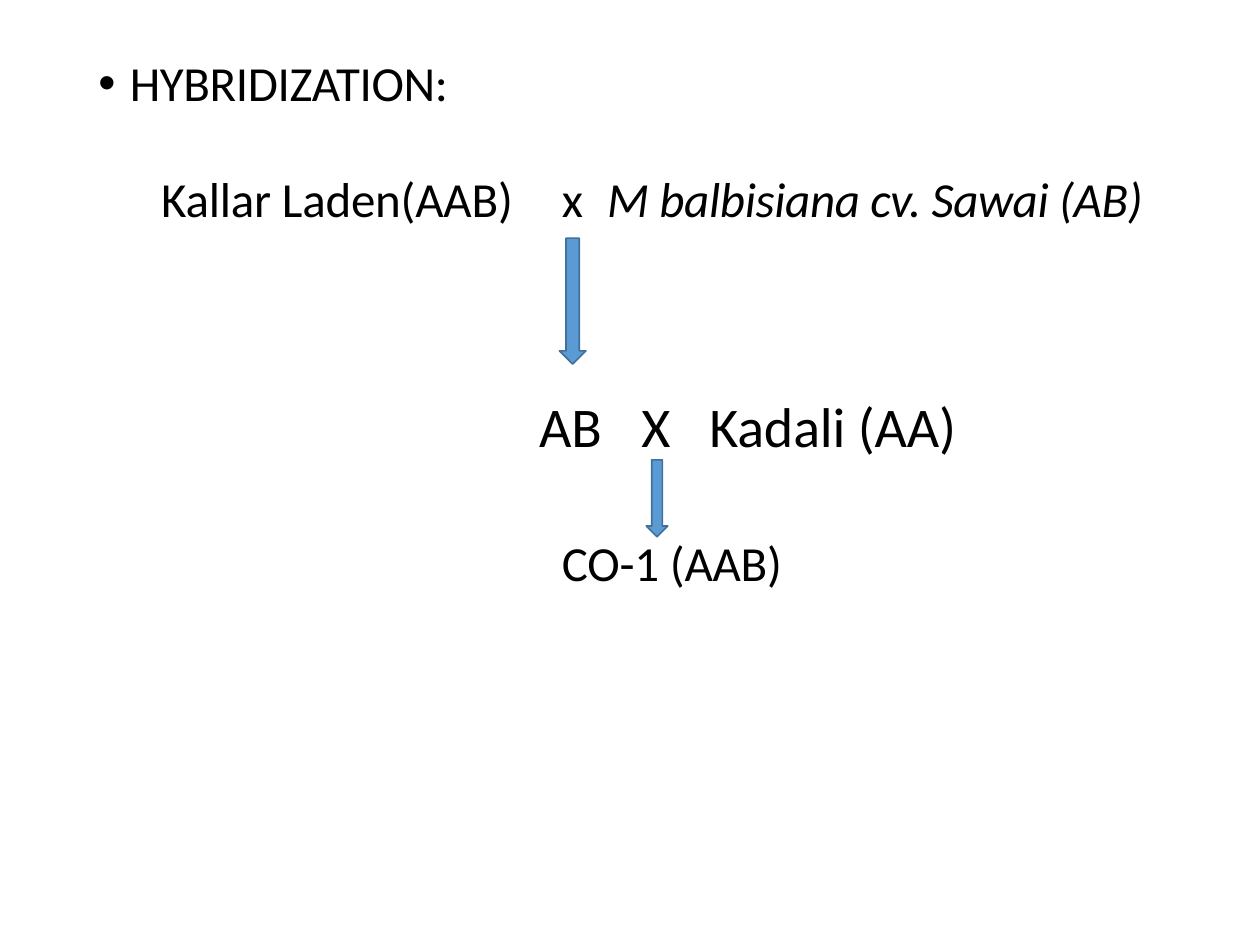
from lxml.etree import SubElement
from pptx import Presentation
from pptx.dml.color import RGBColor
from pptx.enum.shapes import MSO_SHAPE as Kind
from pptx.enum.text import MSO_ANCHOR as Anchor, MSO_AUTO_SIZE as Fit, PP_ALIGN as Align
from pptx.oxml.ns import qn
from pptx.util import Inches, Pt

HEAD = ("HYBRIDIZATION:", 28)
HEAD_BOX = (0.77, 0.41, 2.84, 0.49)
CROSSES = [
    ((1.27, 1.33, 2.84, 0.49), (), [("Kallar Laden(AAB)", 28, 0)]),
    ((4.45, 1.33, 4.8, 0.49), (0.36,),
     [("x\t*M balbisiana cv. Sawai (AB)", 28, 0)]),
    ((4.27, 3.1, 3.4, 1.6), (0.81, 1.35),
     [("AB\tX\tKadali (AA)", 32, 0), ("CO-1 (AAB)", 28, 0.18)]),
]
GAP = 42
ARROWS = [(4.44, 1.89, 0.21, 1), (5.13, 3.65, 0.17, 0.61)]


def color(code):
    return RGBColor.from_string(code)


def indent(para, left, hang=0, bullet=None, tabs=()):
    props = para._p.get_or_add_pPr()
    props.set("marL", str(Inches(left)))
    if hang:
        props.set("indent", str(Inches(hang)))
    if bullet:
        SubElement(props, qn("a:buFont"), typeface="Arial")
        SubElement(props, qn("a:buChar"), char=bullet)
    if tabs:
        stops = SubElement(props, qn("a:tabLst"))
        for stop in tabs:
            SubElement(stops, qn("a:tab"), pos=str(Inches(stop)), algn="l")


def add_run(para, text, track):
    run = para.add_run()
    run.text = text
    run._r.get_or_add_rPr().set("spc", str(track))
    return run


def write(para, text, size, track=-10):
    plain, _, latin = text.partition("*")
    add_run(para, plain, track)
    if latin:
        add_run(para, latin, -20).font.italic = True
    para.alignment = Align.LEFT
    para.font.name = "Calibri"
    para.font.size = Pt(size)
    para.font.color.rgb = color("000000")


def frame(shape):
    body = shape.text_frame
    body.auto_size = Fit.NONE
    body.word_wrap = True
    body.vertical_anchor = Anchor.TOP
    body.margin_left = body.margin_right = body.margin_bottom = 0
    body.margin_top = Inches(0.01)
    return body


deck = Presentation()
deck.slide_width, deck.slide_height = Inches(10), Inches(7.5)
slide = deck.slides.add_slide(deck.slide_layouts[5])

title = slide.shapes.title
title.left, title.top, title.width, title.height = map(Inches, HEAD_BOX)
para = frame(title).paragraphs[0]
indent(para, 0.26, -0.25, "•")
write(para, *HEAD, track=-20)

for box, tabs, lines in CROSSES:
    body = frame(slide.shapes.add_textbox(*map(Inches, box)))
    for row, (text, size, left) in enumerate(lines):
        para = body.add_paragraph() if row else body.paragraphs[0]
        indent(para, left + 0.01, tabs=() if row else tabs)
        if row:
            para.space_before = Pt(GAP)
        write(para, text, size)

for box in ARROWS:
    arrow = slide.shapes.add_shape(Kind.DOWN_ARROW, *map(Inches, box))
    arrow.shadow.inherit = False
    arrow.fill.solid()
    arrow.fill.fore_color.rgb = color("5B9BD4")
    arrow.line.color.rgb = color("41709C")
    arrow.line.width = Pt(0.96)

deck.save("out.pptx")
